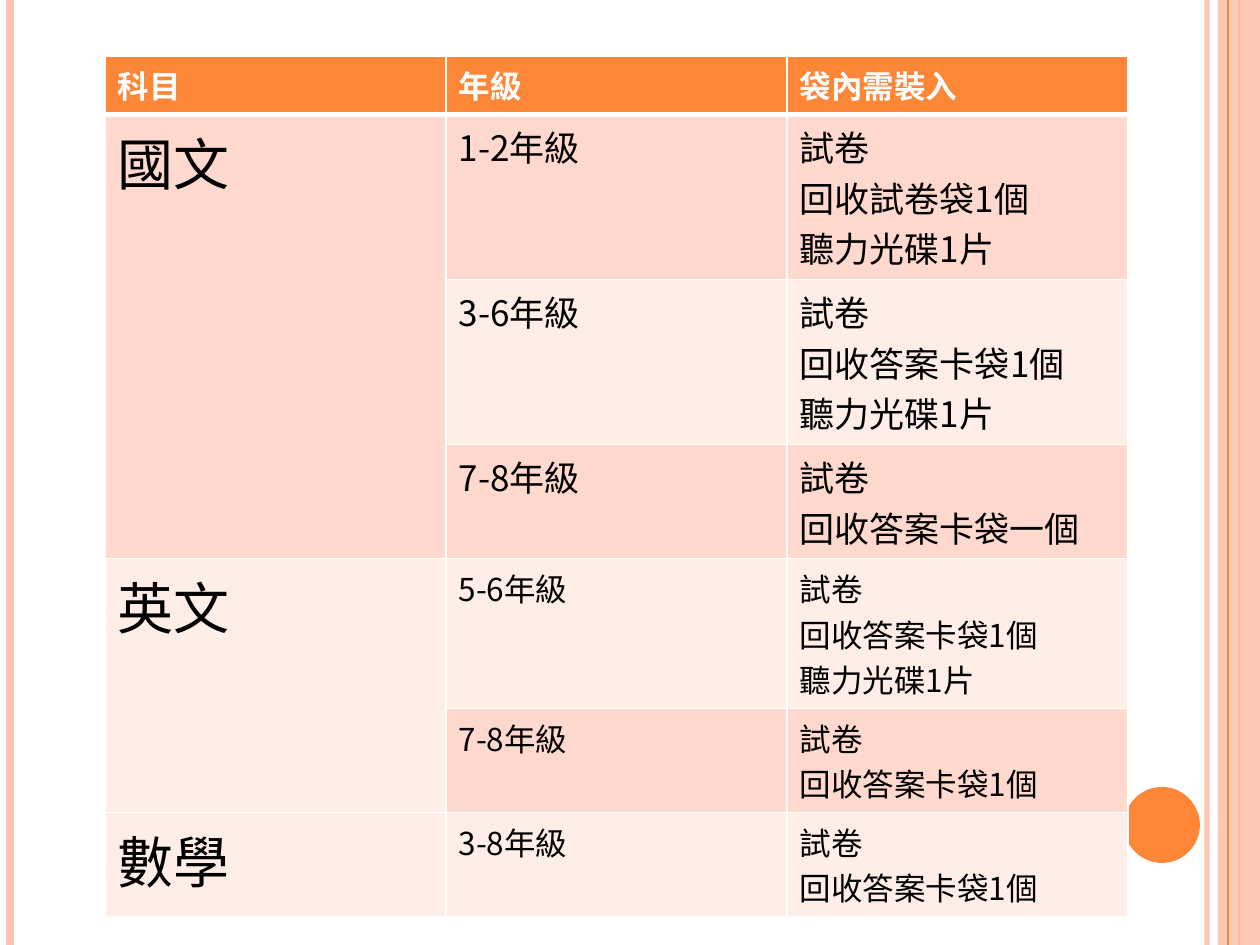
from lxml import etree
from pptx import Presentation
from pptx import util as u
from pptx.dml.color import RGBColor
from pptx.enum import shapes
from pptx.oxml.ns import qn

PX = 914400 / 126
WIDTH, HEIGHT = 1260, 945
ORANGE, PEACH, WHITE, BLACK = "FE8637", "FEC3AE", "FFFFFF", "000000"
DARK_BAND, LIGHT_BAND = "FFD9CE", "FFEDE8"
SANS, SERIF = "Noto Sans CJK JP", "TeX Gyre Schola"

COLUMN_WIDTH = 341
HEADINGS = ["科目", "年級", "袋內需裝入"]
ROW_HEIGHTS = [57, 165, 165, 114, 150, 103, 104]
PAPER, DISC, CARD_BAG = "試卷", "聽力光碟1片", "回收答案卡袋1個"
# Subject, text size of its rows, and (grade, bag contents) for each row
SUBJECTS = [
    ("國文", 20, [
        ("1-2年級", [PAPER, "回收試卷袋1個", DISC]),
        ("3-6年級", [PAPER, CARD_BAG, DISC]),
        ("7-8年級", [PAPER, "回收答案卡袋一個"]),
    ]),
    ("英文", 18, [
        ("5-6年級", [PAPER, CARD_BAG, DISC]),
        ("7-8年級", [PAPER, CARD_BAG]),
    ]),
    ("數學", 18, [("3-8年級", [PAPER, CARD_BAG])]),
]


def px(length):
    return u.Emu(round(length * PX))


def color(value):
    return RGBColor.from_string(value)


def set_alpha(fill_parent, percent):
    """Set the opacity of the solid fill inside an XML element."""
    tint = fill_parent.find(qn("a:solidFill"))[0]
    etree.SubElement(tint, qn("a:alpha"), val=str(percent * 1000))


def add_stripe(page, x, points, tint, alpha=100):
    """Add a vertical line over the full page height."""
    line = page.shapes.add_connector(
        shapes.MSO_CONNECTOR.STRAIGHT, px(x), 0, px(x), px(HEIGHT))
    line.line.width = u.Pt(points)
    line.line.color.rgb = color(tint)
    properties = line._element.spPr
    if alpha < 100:
        set_alpha(properties.find(qn("a:ln")), alpha)
    etree.SubElement(properties, qn("a:effectLst"))


def add_block(page, kind, left, top, width, height, tint, alpha=100):
    block = page.shapes.add_shape(
        kind, px(left), px(top), px(width), px(height))
    block.shadow.inherit = False
    block.fill.solid()
    block.fill.fore_color.rgb = color(tint)
    block.line.fill.background()
    if alpha < 100:
        set_alpha(block._element.spPr, alpha)


def write(frame, text, size, font=SANS, tint=BLACK, bold=False):
    frame.text = text
    for para in frame.paragraphs:
        for span in para.runs:
            span.font.size = u.Pt(size)
            span.font.name = font
            span.font.bold = bold
            span.font.color.rgb = color(tint)
            span.font._element.find(qn("a:latin")).addnext(
                etree.Element(qn("a:ea"), typeface=SANS))


def style_cell(cell, tint, top=1, bottom=1):
    """Set white borders and the fill; top and bottom are widths in points."""
    properties = cell._tc.get_or_add_tcPr()
    for side, points in zip("LRTB", (1, 1, top, bottom)):
        border = etree.SubElement(
            properties, qn(f"a:ln{side}"), w=str(u.Pt(points)))
        solid = etree.SubElement(border, qn("a:solidFill"))
        etree.SubElement(solid, qn("a:srgbClr"), val=WHITE)
    cell.fill.solid()
    cell.fill.fore_color.rgb = color(tint)


def add_exam_table(page):
    columns = len(HEADINGS)
    table = page.shapes.add_table(
        len(ROW_HEIGHTS), columns, px(105), px(56),
        px(COLUMN_WIDTH * columns), px(sum(ROW_HEIGHTS))).table
    for column in table.columns:
        column.width = px(COLUMN_WIDTH)
    for row, height in zip(table.rows, ROW_HEIGHTS):
        row.height = px(height)

    for index, heading in enumerate(HEADINGS):
        cell = table.cell(0, index)
        write(cell.text_frame, heading, 18, font=SERIF, tint=WHITE, bold=True)
        style_cell(cell, ORANGE, bottom=3)

    row = 1
    for subject, size, grades in SUBJECTS:
        first = row
        subject_tint = DARK_BAND if first % 2 else LIGHT_BAND
        for grade, contents in grades:
            band = DARK_BAND if row % 2 else LIGHT_BAND
            top = 3 if row == 1 else 1
            for index, tint in enumerate((subject_tint, band, band)):
                style_cell(table.cell(row, index), tint, top=top)
            write(table.cell(row, 1).text_frame, grade, size)
            write(table.cell(row, 2).text_frame, "\n".join(contents), size)
            row += 1
        if len(grades) > 1:
            table.cell(first, 0).merge(table.cell(row - 1, 0))
        write(table.cell(first, 0).text_frame, subject, 32)


def main():
    deck = Presentation()
    deck.slide_width, deck.slide_height = px(WIDTH), px(HEIGHT)
    page = deck.slides.add_slide(deck.slide_layouts[6])
    page.background.fill.solid()
    page.background.fill.fore_color.rgb = color(WHITE)

    add_stripe(page, 1207, 3, PEACH, alpha=93)
    add_stripe(page, 10, 4.5, PEACH)
    add_stripe(page, 1239, 1.5, ORANGE)
    add_block(page, shapes.MSO_SHAPE.RECTANGLE,
              1218, 0, 42, HEIGHT, PEACH, alpha=87)
    add_stripe(page, 1228, 0.75, ORANGE)
    add_block(page, shapes.MSO_SHAPE.OVAL, 1124, 787, 76, 76, ORANGE)
    add_exam_table(page)
    deck.save("out.pptx")


if __name__ == "__main__":
    main()
